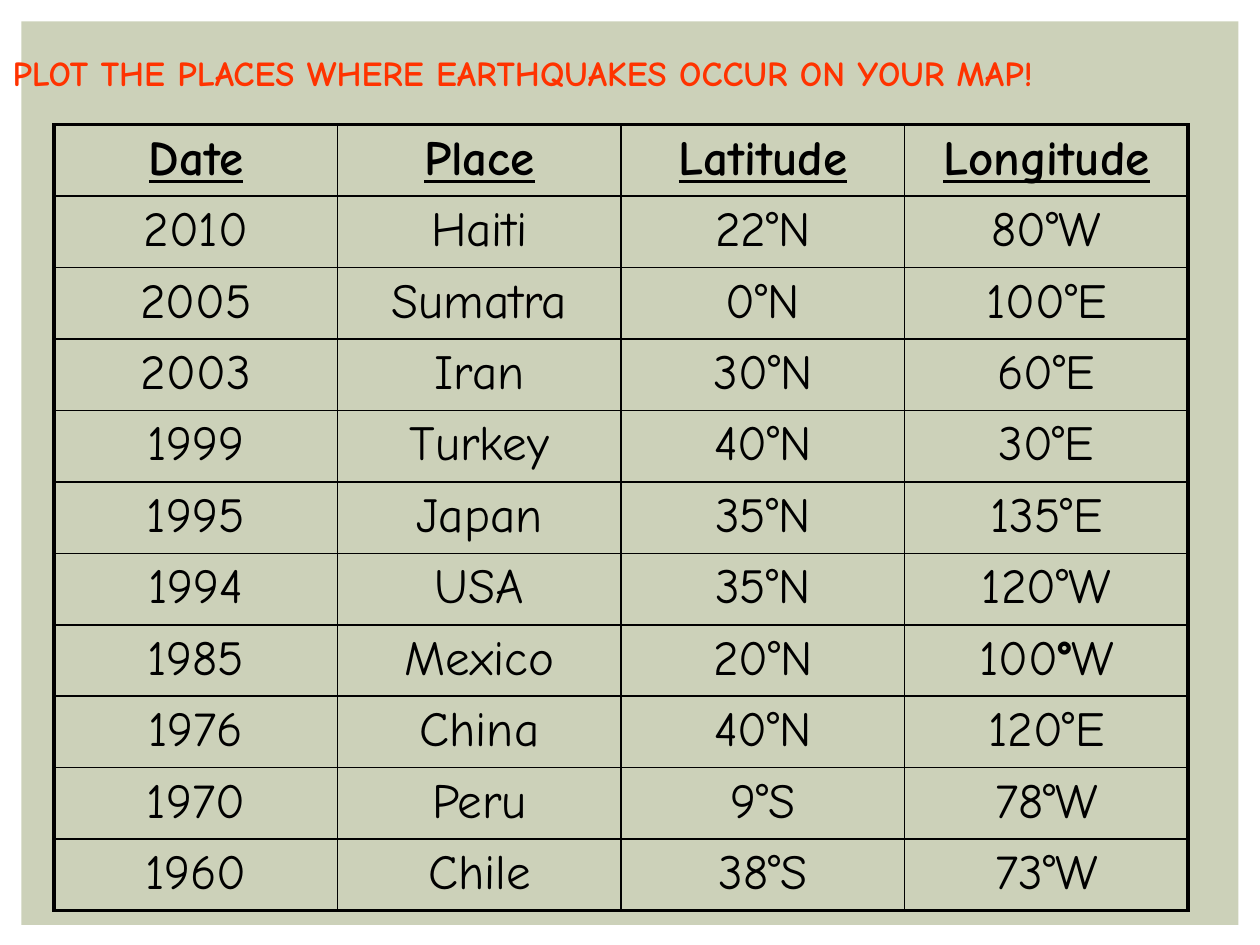
from lxml import etree
from pptx import Presentation, util as u
from pptx.dml.color import RGBColor
from pptx.enum import shapes, text
from pptx.oxml.ns import qn

HEADING = "PLOT THE PLACES WHERE EARTHQUAKES OCCUR ON YOUR MAP!"
COLUMNS = ("Date", "Place", "Latitude", "Longitude")
EARTHQUAKES = [
    ("2010", "Haiti", "22°N", "80°W"),
    ("2005", "Sumatra", "0°N", "100°E"),
    ("2003", "Iran", "30°N", "60°E"),
    ("1999", "Turkey", "40°N", "30°E"),
    ("1995", "Japan", "35°N", "135°E"),
    ("1994", "USA", "35°N", "120°W"),
    ("1985", "Mexico", "20°N", ("100", "°", "W")),
    ("1976", "China", "40°N", "120°E"),
    ("1970", "Peru", "9°S", "78°W"),
    ("1960", "Chile", "38°S", "73°W"),
]
THEME = {
    "font": "Comic Neue",
    "panel": "CCD1B9",
    "ink": "000000",
    "accent": "FF3300",
    "heading_size": 20,
    "table_size": 28,
    "outer_line": 2.25,
    "inner_line": 1,
}


def write(frame, content, size, color, align, bold=False, underline=False):
    paragraph = frame.paragraphs[0]
    paragraph.alignment = align
    parts = (content,) if isinstance(content, str) else content
    for part in parts:
        run = paragraph.add_run()
        run.text = part
        font = run.font
        font.name = THEME["font"]
        font.size = u.Pt(size)
        font.color.rgb = RGBColor.from_string(color)
        font.bold = bold or (len(parts) > 1 and part == "°")
        font.underline = underline


def set_borders(cell, outer_sides):
    properties = cell._tc.get_or_add_tcPr()
    for side, is_outer in outer_sides.items():
        width = THEME["outer_line" if is_outer else "inner_line"]
        line = etree.SubElement(properties, qn(f"a:ln{side}"), w=str(u.Pt(width)))
        fill = etree.SubElement(line, qn("a:solidFill"))
        etree.SubElement(fill, qn("a:srgbClr"), val=THEME["ink"])


def add_panel(slide):
    panel = slide.shapes.add_shape(
        shapes.MSO_SHAPE.RECTANGLE,
        u.Inches(0.17), u.Inches(0.17), u.Inches(9.66), u.Inches(7.17))
    panel.shadow.inherit = False
    panel.fill.solid()
    panel.fill.fore_color.rgb = RGBColor.from_string(THEME["panel"])
    panel.line.fill.background()


def add_earthquake_table(slide):
    rows = [COLUMNS, *EARTHQUAKES]
    last_row, last_column = len(rows) - 1, len(COLUMNS) - 1
    table = slide.shapes.add_table(
        len(rows), len(COLUMNS),
        u.Inches(0.43), u.Inches(0.99), u.Inches(9), u.Inches(6.24)).table
    table.first_row = table.horz_banding = False
    for r, row in enumerate(rows):
        for c, content in enumerate(row):
            cell = table.cell(r, c)
            set_borders(cell, {"L": c == 0, "R": c == last_column,
                               "T": r == 0, "B": r == last_row})
            cell.fill.background()
            write(cell.text_frame, content, THEME["table_size"], THEME["ink"],
                  text.PP_ALIGN.CENTER, bold=r == 0, underline=r == 0)


def place_heading(slide):
    title = slide.shapes.title
    title.left, title.top = u.Inches(0), u.Inches(0.36)
    title.width, title.height = u.Inches(9.51), u.Inches(0.43)
    frame = title.text_frame
    frame.word_wrap = True
    frame.auto_size = text.MSO_AUTO_SIZE.NONE
    frame.vertical_anchor = text.MSO_ANCHOR.TOP
    write(frame, HEADING, THEME["heading_size"], THEME["accent"],
          text.PP_ALIGN.LEFT, bold=True)
    title.element.getparent().append(title.element)


def main():
    presentation = Presentation()
    presentation.slide_width, presentation.slide_height = u.Inches(10), u.Inches(7.5)
    slide = presentation.slides.add_slide(presentation.slide_layouts[5])
    add_panel(slide)
    add_earthquake_table(slide)
    place_heading(slide)
    presentation.save("out.pptx")


if __name__ == "__main__":
    main()
